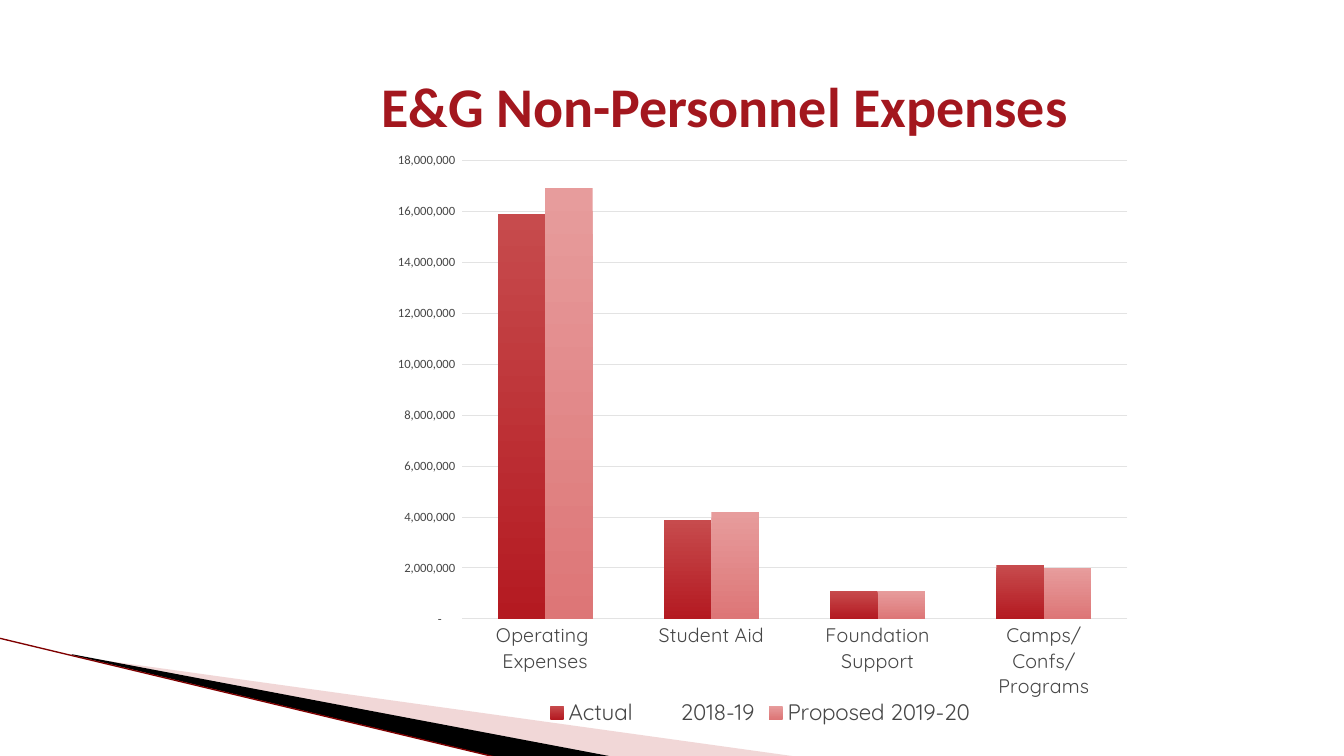
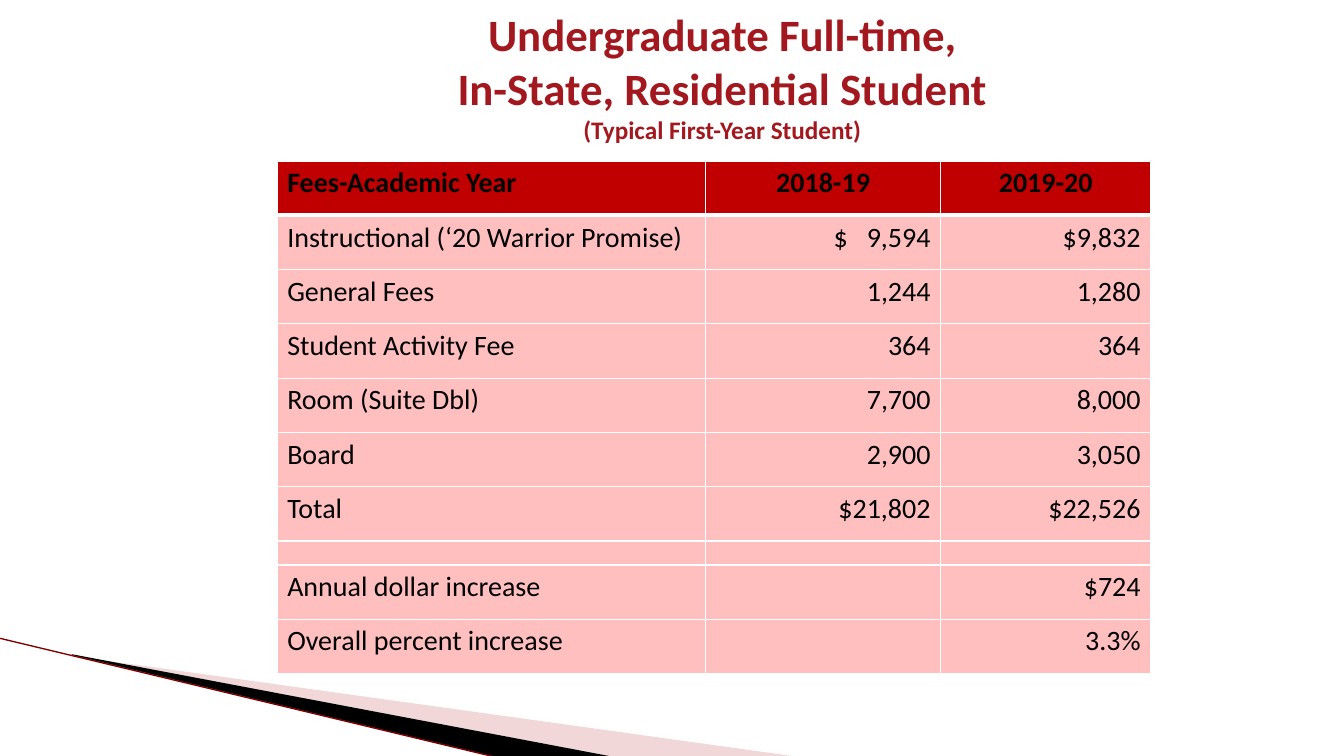
from dataclasses import dataclass
from lxml.etree import SubElement
from pptx import Presentation
from pptx.chart.data import CategoryChartData
from pptx.dml.color import RGBColor
from pptx.enum.chart import XL_CHART_TYPE, XL_LEGEND_POSITION, XL_TICK_MARK
from pptx.enum.shapes import MSO_CONNECTOR
from pptx.enum.text import MSO_ANCHOR, MSO_AUTO_SIZE, PP_ALIGN
from pptx.oxml.ns import qn
from pptx.util import Pt


@dataclass
class Theme:
    red: str = "A3171E"
    pink: str = "DD9D9D"
    line: str = "7F0000"
    black: str = "000000"
    white: str = "FFFFFF"
    grey: str = "464646"
    grid: str = "E3E3E3"
    head: str = "C00000"
    body: str = "FFBFBF"
    bars: tuple = (("C74B4D", "B41A21"), ("E79C9C", "DD7677"))
    main: str = "Calibri"
    label: str = "Quicksand"
    title: int = 40
    title_two: int = 32
    note: int = 18
    cell: int = 20
    gap: int = 8
    value: int = 9
    group: int = 14
    legend: int = 16


theme = Theme()


def style(font, size, color, name=theme.main, bold=False):
    font.size = Pt(size)
    font.name = name
    font.bold = bold
    font.color.rgb = RGBColor.from_string(color)


def add_page(text, box, sizes):
    page = deck.slides.add_slide(layout)
    title = page.shapes.title
    title.left, title.top, title.width, title.height = map(Pt, box)
    frame = title.text_frame
    frame.text = text
    frame.word_wrap = True
    frame.auto_size = MSO_AUTO_SIZE.NONE
    frame.vertical_anchor = MSO_ANCHOR.MIDDLE
    para = frame.paragraphs[0]
    para.alignment = PP_ALIGN.CENTER
    for run, size in zip(para.runs, sizes):
        style(run.font, size, theme.red, bold=True)
    return page


deck = Presentation()
deck.slide_width, deck.slide_height = Pt(960), Pt(540)
layout = deck.slide_layouts.get_by_name("Title Only")

# Slide 1: title
page = add_page("E&G Non-Personnel Expenses", (217, 49, 601, 52.5), [theme.title])

# Shared corner wedges and line, moved to the layout
wedges = [
    (theme.pink, [(52.6, 468.7), (571, 540.7), (437.8, 540.7), (52.6, 468)]),
    (theme.black, [(51.1, 467.3), (438.5, 540.7), (357.1, 541.4), (51.8, 468)]),
]
decor = []
for color, points in wedges:
    spots = [(Pt(x), Pt(y)) for x, y in points]
    pen = page.shapes.build_freeform(*spots[0])
    pen.add_line_segments(spots[1:], close=True)
    wedge = pen.convert_to_shape()
    wedge.shadow.inherit = False
    wedge.fill.solid()
    wedge.fill.fore_color.rgb = RGBColor.from_string(color)
    wedge.line.fill.background()
    decor.append(wedge)
tint = next(decor[0].element.iter(qn("a:srgbClr")))
SubElement(tint, qn("a:alpha"), val="40000")

edge = page.shapes.add_connector(
    MSO_CONNECTOR.STRAIGHT, Pt(-0.7), Pt(455.8), Pt(356.4), Pt(541.4))
edge.line.color.rgb = RGBColor.from_string(theme.line)
edge.line.width = Pt(0.95)
SubElement(edge.element.spPr, qn("a:effectLst"))
decor.append(edge)
for number, shape in enumerate(decor, 20):
    next(shape.element.iter(qn("p:cNvPr"))).set("id", str(number))
    layout.shapes.element.append(shape.element)

# Expense chart
data = CategoryChartData(
    number_format='_(* #,##0_);_(* \\(#,##0\\);_(* "-"??_);_(@_)')
data.categories = ["Operating  Expenses", "Student Aid", "Foundation Support",
                   "Camps/Confs/Programs"]
data.add_series("Actual        2018-19", (15900000, 3900000, 1100000, 2100000))
data.add_series("Proposed 2019-20", (16900000, 4200000, 1100000, 2000000))
chart = page.shapes.add_chart(
    XL_CHART_TYPE.COLUMN_CLUSTERED, Pt(270), Pt(102), Pt(546), Pt(420), data).chart
chart.has_title = False
style(chart.font, 10, theme.black)

plot = chart.plots[0]
plot.gap_width, plot.overlap = 150, 0
plot.vary_by_categories = False
for series, colors in zip(plot.series, theme.bars):
    fill = series.format.fill
    fill.gradient()
    fill.gradient_angle = 270
    for place, (stop, color) in enumerate(zip(fill.gradient_stops, colors)):
        stop.position = place
        stop.color.rgb = RGBColor.from_string(color)

groups, values = chart.category_axis, chart.value_axis
for axis in (groups, values):
    axis.major_tick_mark = axis.minor_tick_mark = XL_TICK_MARK.NONE
style(groups.tick_labels.font, theme.group, theme.grey, theme.label)
style(values.tick_labels.font, theme.value, theme.grey)
values.minimum_scale, values.maximum_scale = 0, 18000000
values.major_unit = 2000000
values.format.line.fill.background()
for line in (groups.format.line, values.major_gridlines.format.line):
    line.color.rgb = RGBColor.from_string(theme.grid)
    line.width = Pt(0.75)

chart.has_legend = True
chart.legend.position = XL_LEGEND_POSITION.BOTTOM
chart.legend.include_in_layout = False
style(chart.legend.font, theme.legend, theme.grey, theme.label)

# Fixed inner plot area
area = next(chart.element.iter(qn("c:plotArea")))
for old in area.findall(qn("c:layout")):
    area.remove(old)
place = SubElement(area, qn("c:layout"))
area.insert(0, place)
manual = SubElement(place, qn("c:manualLayout"))
for tag, val in [("layoutTarget", "inner"), ("xMode", "edge"), ("yMode", "edge"),
                 ("x", "0.11"), ("y", "0.03"), ("w", "0.87"), ("h", "0.78")]:
    SubElement(manual, qn("c:" + tag), val=val)

# Slide 2: title
page = add_page(
    "Undergraduate Full-time,\vIn-State, Residential Student\v(Typical First-Year Student)",
    (210, 0, 612, 108), [theme.title_two, theme.title_two, theme.note])

# Fee table
rows = [
    ("Fees-Academic Year", "2018-19", "2019-20"),
    ("Instructional (‘20 Warrior Promise)", "$   9,594", "$9,832"),
    ("General Fees", "1,244", "1,280"),
    ("Student Activity Fee", "364", "364"),
    ("Room (Suite Dbl)", "7,700", "8,000"),
    ("Board", "2,900", "3,050"),
    ("Total", "$21,802", "$22,526"),
    ("", "", ""),
    ("Annual dollar increase", "", "$724"),
    ("Overall percent increase", "", "3.3%"),
]
frame = page.shapes.add_table(
    len(rows), 3, Pt(198), Pt(115), Pt(624), Pt(366.8))
table = frame.table
table.horz_banding = False
for column, width in zip(table.columns, (306, 168, 150)):
    column.width = Pt(width)

# Cell borders, heavier below the header
for index, item in enumerate(frame.element.iter(qn("a:tc"))):
    row = index // 3
    for side in "LRTB":
        heavy = (row, side) in ((0, "B"), (1, "T"))
        line = SubElement(item.get_or_add_tcPr(), qn("a:ln" + side),
                          w=str(Pt(3 if heavy else 1)))
        paint = SubElement(line, qn("a:solidFill"))
        SubElement(paint, qn("a:srgbClr"), val=theme.white)

# Cell text and fills
for r, texts in enumerate(rows):
    table.rows[r].height = Pt(38.8 if any(texts) else 17)
    for c, text in enumerate(texts):
        cell = table.cell(r, c)
        cell.fill.solid()
        cell.fill.fore_color.rgb = RGBColor.from_string(theme.body if r else theme.head)
        if not text:
            continue
        cell.text_frame.text = text
        para = cell.text_frame.paragraphs[0]
        if c:
            para.alignment = PP_ALIGN.RIGHT if r else PP_ALIGN.CENTER
        style(para.runs[0].font, theme.cell, theme.black, bold=r == 0)

# Small type in empty cells keeps the spacer row low
for para in frame.element.iter(qn("a:p")):
    if para.find(qn("a:r")) is None:
        SubElement(para, qn("a:endParaRPr"), sz=str(theme.gap * 100))

deck.save("out.pptx")
